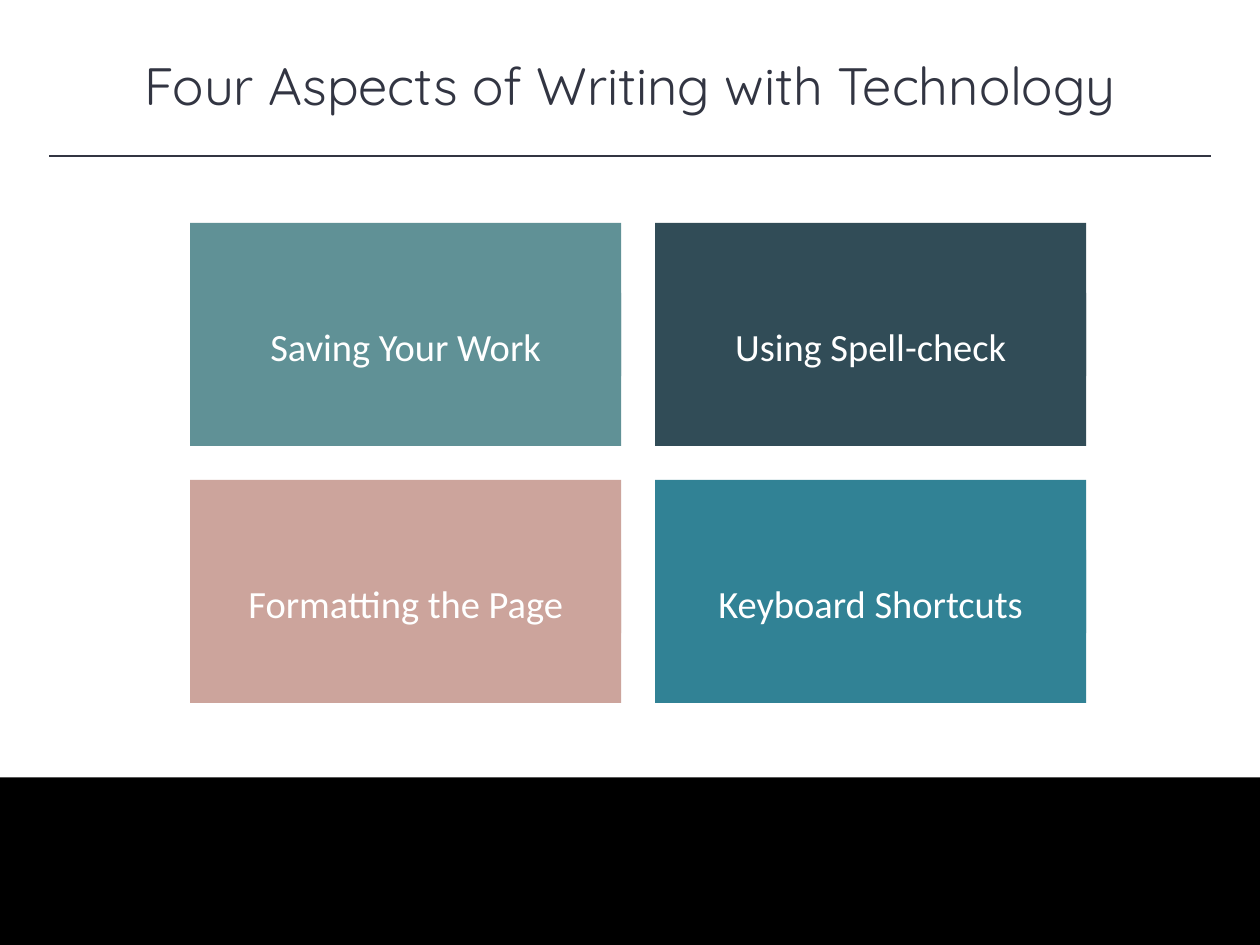
from lxml import etree
from pptx import Presentation, util as u
from pptx.dml.color import RGBColor
from pptx.enum import shapes, text
from pptx.oxml.ns import qn

# Content
TITLE = "Four Aspects of Writing with Technology"
ASPECTS = [
    [("Saving Your Work", "teal"), ("Using Spell-check", "slate")],
    [("Formatting the Page", "rose"), ("Keyboard Shortcuts", "blue")],
]
COLORS = {
    "ink": "323542", "black": "000000", "white": "FFFFFF", "teal": "609196",
    "slate": "314C57", "rose": "CCA49C", "blue": "318295",
}

# Grid, in inches
WIDTH, HEIGHT = 10, 7.5
MARGIN, RULE_Y = 0.39, 1.24
GRID_LEFT, GRID_TOP = 1.51, 1.77
CARD_W, CARD_H = 3.42, 1.77
GAP = 0.27
LABEL_H = 0.66
FOOTER_H = 1.33


def rgb(name):
    return RGBColor.from_string(COLORS[name])


def add_block(parent, left, top, width, height, color):
    block = parent.add_shape(shapes.MSO_SHAPE.RECTANGLE,
                             *map(u.Inches, (left, top, width, height)))
    block.shadow.inherit = False
    block.fill.solid()
    block.fill.fore_color.rgb = rgb(color)
    block.line.fill.background()
    return block


def write(frame, words, font, size, color):
    frame.word_wrap = True
    frame.auto_size = text.MSO_AUTO_SIZE.SHAPE_TO_FIT_TEXT
    paragraph = frame.paragraphs[0]
    paragraph.text = words
    paragraph.alignment = text.PP_ALIGN.CENTER
    paragraph.font.name = font
    paragraph.font.size = u.Pt(size)
    paragraph.font.color.rgb = rgb(color)
    return paragraph


deck = Presentation()
deck.slide_width, deck.slide_height = u.Inches(WIDTH), u.Inches(HEIGHT)
slide = deck.slides.add_slide(deck.slide_layouts[6])

# Title
title = slide.shapes.add_textbox(0, u.Inches(0.37), deck.slide_width, u.Inches(0.61))
write(title.text_frame, TITLE, "Quicksand", 30, "ink")

# Footer band
add_block(slide.shapes, 0, HEIGHT - FOOTER_H, WIDTH, FOOTER_H, "black")

# Rule under the title
rule = slide.shapes.add_connector(
    shapes.MSO_CONNECTOR.STRAIGHT,
    *map(u.Inches, (MARGIN, RULE_Y, WIDTH - MARGIN, RULE_Y)))
rule.line.color.rgb = rgb("ink")
rule.line.width = u.Pt(1)
etree.SubElement(rule._element.spPr, qn("a:effectLst"))

# Aspect cards, each grouped with its label
for row, aspects in enumerate(ASPECTS):
    for column, (aspect, color) in enumerate(aspects):
        left = GRID_LEFT + column * (CARD_W + GAP)
        top = GRID_TOP + row * (CARD_H + GAP)
        card = slide.shapes.add_group_shape().shapes
        add_block(card, left, top, CARD_W, CARD_H, color)
        label = add_block(card, left, top + (CARD_H - LABEL_H) / 2,
                          CARD_W, LABEL_H, color)
        label.text_frame.vertical_anchor = text.MSO_ANCHOR.MIDDLE
        write(label.text_frame, aspect, "Calibri", 22, "white").line_spacing = 1.5

deck.save("out.pptx")
